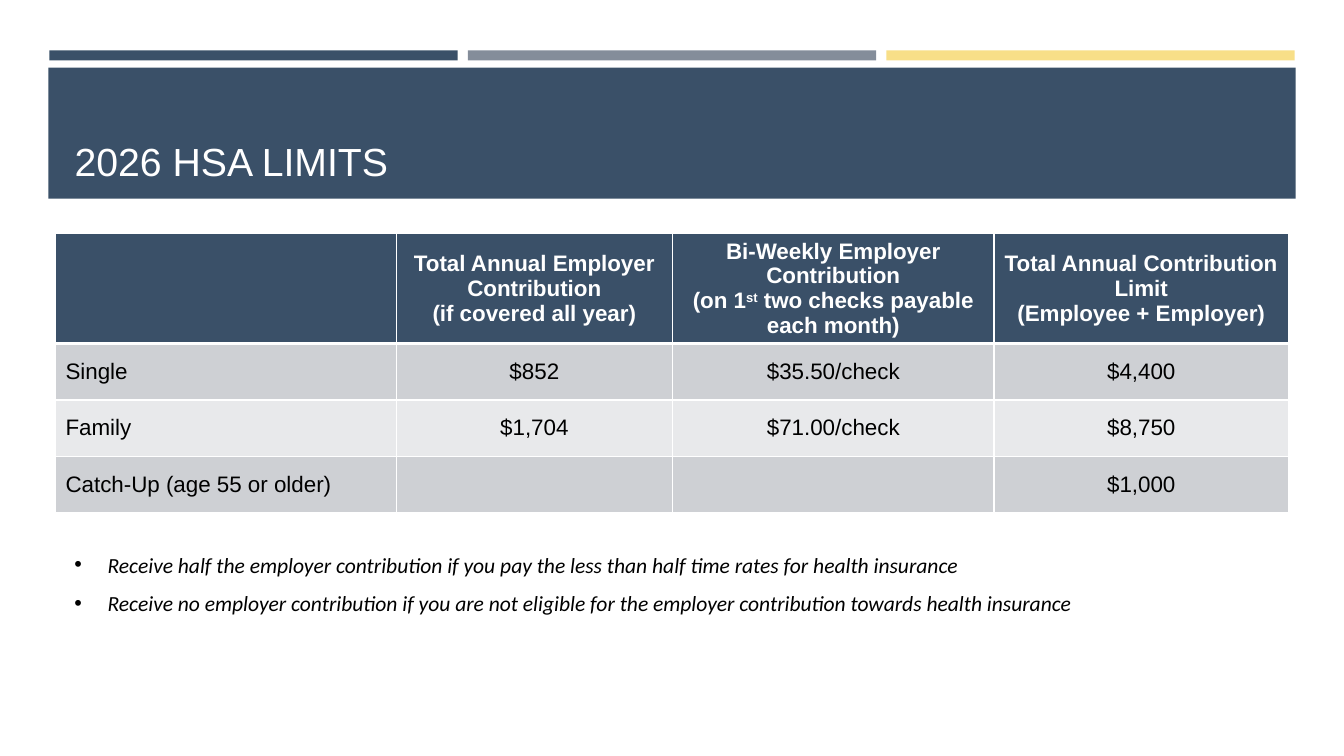
from dataclasses import dataclass

from lxml import etree
from pptx import Presentation
from pptx.dml.color import RGBColor
from pptx.enum.shapes import MSO_SHAPE
from pptx.enum.text import MSO_ANCHOR, MSO_AUTO_SIZE, PP_ALIGN
from pptx.oxml.ns import qn
from pptx.util import Pt

RECTANGLE = MSO_SHAPE.RECTANGLE
MIDDLE, BOTTOM = MSO_ANCHOR.MIDDLE, MSO_ANCHOR.BOTTOM
LEFT, CENTER = PP_ALIGN.LEFT, PP_ALIGN.CENTER
NO_AUTOFIT = MSO_AUTO_SIZE.NONE
TITLE_ONLY = 5
PX = 9144  # EMU in one px, 100 px to the inch


@dataclass(frozen=True)
class Theme:
    navy: str = "3A5068"
    gray: str = "848D9A"
    yellow: str = "F8DF88"
    white: str = "FFFFFF"
    black: str = "000000"
    bands: tuple = ("CED0D4", "E8E9EB")
    heading_font: str = "Arial"
    note_font: str = "Calibri"
    title_size: float = 28
    table_size: float = 16
    note_size: float = 15.4


class SlideBuilder:
    def __init__(self, page, theme):
        self.page = page
        self.theme = theme

    def place(self, shape, left, top, width, height):
        shape.left, shape.top = left * PX, top * PX
        shape.width, shape.height = width * PX, height * PX

    def add_span(self, para, text, font, size, color, bold=False, italic=False):
        span = para.add_run()
        span.text = text
        span.font.name, span.font.size = font, Pt(size)
        span.font.bold, span.font.italic = bold, italic
        span.font.color.rgb = RGBColor.from_string(color)
        return span

    def add_bar(self, left, top, width, height, color):
        bar = self.page.shapes.add_shape(
            RECTANGLE, left * PX, top * PX, width * PX, height * PX)
        bar.shadow.inherit = False
        bar.fill.solid()
        bar.fill.fore_color.rgb = RGBColor.from_string(color)
        bar.line.fill.background()
        # Keep the bars behind the title
        self.page.shapes.title.element.addprevious(bar.element)

    def set_title(self, text, *area):
        title = self.page.shapes.title
        self.place(title, *area)
        frame = title.text_frame
        frame.word_wrap, frame.auto_size = True, NO_AUTOFIT
        frame.vertical_anchor = BOTTOM
        para = frame.paragraphs[0]
        para.alignment = LEFT
        self.add_span(para, text, self.theme.heading_font,
                      self.theme.title_size, self.theme.white)

    def set_borders(self, cell, bottom_width):
        props = cell._tc.get_or_add_tcPr()
        sides = {"a:lnL": 1, "a:lnR": 1, "a:lnT": 1, "a:lnB": bottom_width}
        for position, (tag, width) in enumerate(sides.items()):
            line = etree.Element(qn(tag), w=str(Pt(width)))
            fill = etree.SubElement(line, qn("a:solidFill"))
            etree.SubElement(fill, qn("a:srgbClr"), val=self.theme.white)
            props.insert(position, line)

    def fill_cell(self, cell, paragraphs, fill, color, bold, alignment):
        cell.fill.solid()
        cell.fill.fore_color.rgb = RGBColor.from_string(fill)
        cell.vertical_anchor = MIDDLE
        for index, spans in enumerate(paragraphs):
            frame = cell.text_frame
            para = frame.add_paragraph() if index else frame.paragraphs[0]
            para.alignment = alignment
            for text, baseline in spans:
                span = self.add_span(para, text, self.theme.heading_font,
                                     self.theme.table_size, color, bold)
                if baseline:
                    span.font._element.set("baseline", str(baseline * 1000))

    def add_table(self, left, top, widths, heights, header, rows):
        theme = self.theme
        table = self.page.shapes.add_table(
            len(heights), len(widths), left * PX, top * PX,
            sum(widths) * PX, sum(heights) * PX).table
        for column, width in zip(table.columns, widths):
            column.width = width * PX
        for row, height in zip(table.rows, heights):
            row.height = height * PX
        for column, paragraphs in enumerate(header):
            cell = table.cell(0, column)
            self.fill_cell(cell, paragraphs, theme.navy, theme.white, True, CENTER)
            self.set_borders(cell, 3)
        for number, values in enumerate(rows, start=1):
            band = theme.bands[(number - 1) % 2]
            for column, value in enumerate(values):
                cell = table.cell(number, column)
                paragraphs = [[(value, 0)]] if value else []
                self.fill_cell(cell, paragraphs, band, theme.black, False,
                               CENTER if column else LEFT)
                self.set_borders(cell, 1)

    def add_bullets(self, items, indent, *area):
        box = self.page.shapes.add_textbox(*(length * PX for length in area))
        frame = box.text_frame
        frame.word_wrap, frame.auto_size = True, NO_AUTOFIT
        frame.vertical_anchor = MIDDLE
        for index, item in enumerate(items):
            para = frame.add_paragraph() if index else frame.paragraphs[0]
            props = para._p.get_or_add_pPr()
            props.set("marL", str(indent * PX))
            props.set("indent", str(-indent * PX))
            etree.SubElement(props, qn("a:buFont"), typeface="Arial")
            etree.SubElement(props, qn("a:buChar"), char="•")
            para.space_before = Pt(3 if index else 0)
            para.space_after = Pt(6)
            self.add_span(para, item, self.theme.note_font,
                          self.theme.note_size, self.theme.black, italic=True)


HEADER = [
    [],
    [[("Total Annual Employer Contribution", 0)],
     [("(if covered all year)", 0)]],
    [[("Bi-Weekly Employer Contribution", 0)],
     [("(on 1", 0), ("st", 30), (" two checks payable each month)", 0)]],
    [[("Total Annual Contribution Limit", 0)],
     [("(Employee + Employer)", 0)]],
]
ROWS = [
    ("Single", "$852", "$35.50/check", "$4,400"),
    ("Family", "$1,704", "$71.00/check", "$8,750"),
    ("Catch-Up (age 55 or older)", "", "", "$1,000"),
]
NOTES = [
    "Receive half the employer contribution if you pay the less than half "
    "time rates for health insurance",
    "Receive no employer contribution if you are not eligible for the "
    "employer contribution towards health insurance",
]


def main():
    deck = Presentation()
    deck.slide_width, deck.slide_height = 1333 * PX, 750 * PX
    page = deck.slides.add_slide(deck.slide_layouts[TITLE_ONLY])
    theme = Theme()
    builder = SlideBuilder(page, theme)

    # Accent bars and title band
    for index, color in enumerate((theme.navy, theme.gray, theme.yellow)):
        builder.add_bar(49 + 415 * index, 50, 405, 10, color)
    builder.add_bar(48, 67, 1237, 130, theme.navy)
    builder.set_title("2026 HSA LIMITS", 64, 77, 1206, 111)

    # Contribution limits
    builder.add_table(55, 232, (338, 274, 319, 292), (104, 56, 56, 56),
                      HEADER, ROWS)

    # Eligibility notes
    builder.add_bullets(NOTES, 33, 64, 545, 1206, 68)

    deck.save("out.pptx")


if __name__ == "__main__":
    main()
